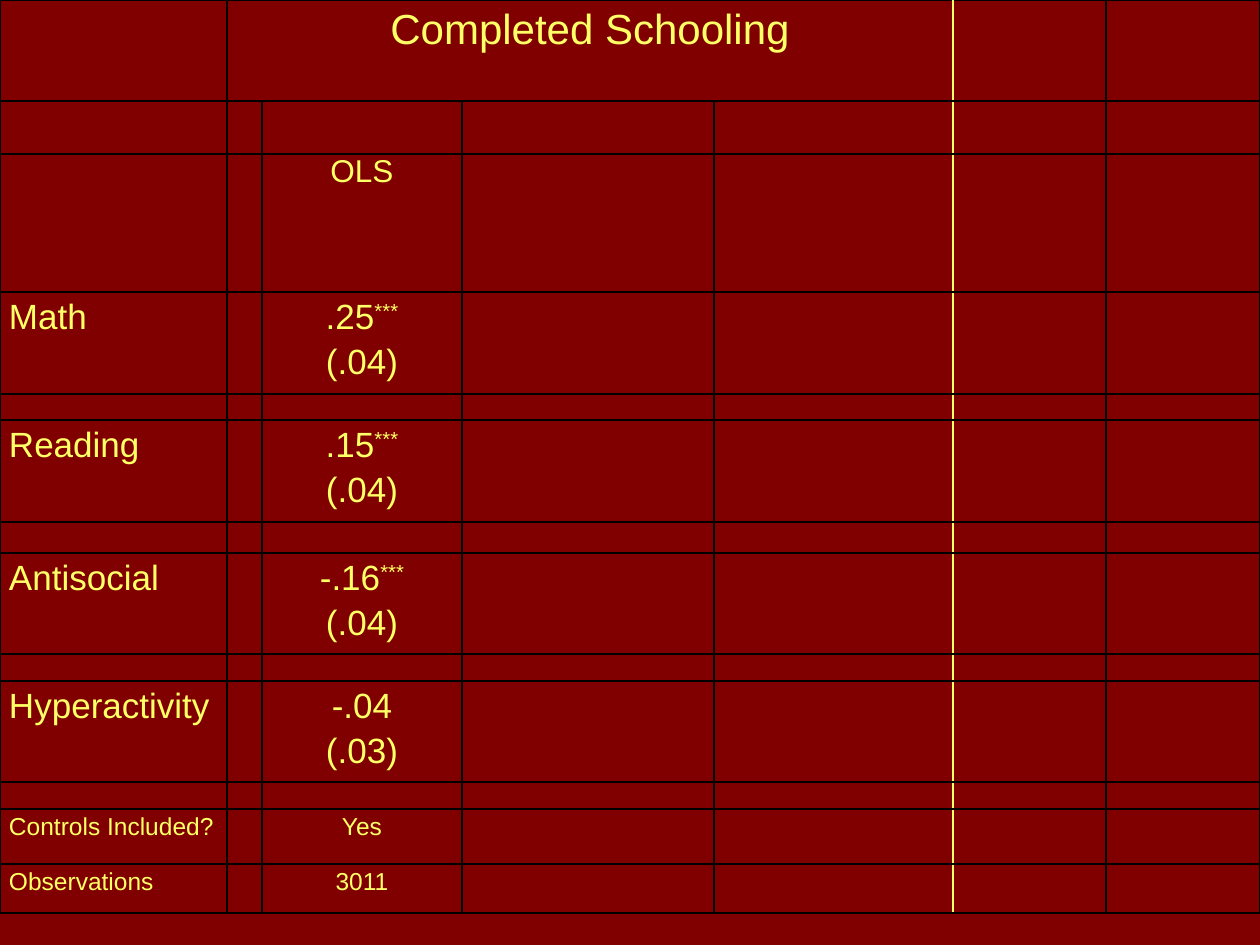
from lxml import etree
from pptx import Presentation
from pptx.dml.color import RGBColor
from pptx.enum.text import PP_ALIGN
from pptx.oxml.ns import qn
from pptx.util import Pt

CENTER, LEFT = PP_ALIGN.CENTER, PP_ALIGN.LEFT
EMU_PER_PX = 914400 / 126
COLORS = {"background": "800000", "text": "FFFF66", "line": "000000", "divider": "FFFF66"}
FONT = "Arial"
COLUMN_WIDTHS = [227, 35, 200, 252, 239, 153, 154]
ROW_HEIGHTS = [101, 53, 138, 102, 26, 102, 31, 101, 27, 101, 27, 55, 49]
DIVIDER_COLUMN = 4
COEFFICIENTS = [
    ("Math", ".25", "***", "(.04)"),
    ("Reading", ".15", "***", "(.04)"),
    ("Antisocial", "-.16", "***", "(.04)"),
    ("Hyperactivity", "-.04", "", "(.03)"),
]
SUMMARY = [("Controls Included?", "Yes"), ("Observations", "3011")]


def px(value):
    return round(value * EMU_PER_PX)


def set_border(cell, side, color):
    line = etree.SubElement(cell._tc.get_or_add_tcPr(), qn(f"a:ln{side}"), w=str(Pt(1)))
    fill = etree.SubElement(line, qn("a:solidFill"))
    etree.SubElement(fill, qn("a:srgbClr"), val=color)


def format_cell(cell, left_color, right_color):
    cell.margin_left = cell.margin_right = px(9)
    cell.margin_top = cell.margin_bottom = 0
    for side, color in zip("LRTB", (left_color, right_color, COLORS["line"], COLORS["line"])):
        set_border(cell, side, color)
    cell.fill.background()
    paragraph = cell.text_frame.paragraphs[0]
    etree.SubElement(paragraph._p, qn("a:endParaRPr"), sz="800")


def write_cell(cell, lines, size, alignment=CENTER, spacing=1.15):
    paragraph = cell.text_frame.paragraphs[0]
    paragraph.alignment = alignment
    paragraph.line_spacing = spacing
    paragraph.space_after = Pt(6)
    for index, (text, superscript) in enumerate(lines):
        if index:
            paragraph.add_line_break()
        for part, baseline in ((text, "0"), (superscript, "30000")):
            if part:
                run = paragraph.add_run()
                run.text = part
                run.font.name = FONT
                run.font.size = Pt(size)
                run.font.color.rgb = RGBColor.from_string(COLORS["text"])
                run._r.get_or_add_rPr().set("baseline", baseline)


def add_grid(slide, left, top):
    frame = slide.shapes.add_table(
        len(ROW_HEIGHTS), len(COLUMN_WIDTHS), px(left), px(top),
        px(sum(COLUMN_WIDTHS)), px(sum(ROW_HEIGHTS)))
    table = frame.table
    table.first_row = table.horz_banding = False
    for column, width in zip(table.columns, COLUMN_WIDTHS):
        column.width = px(width)
    for row, height in zip(table.rows, ROW_HEIGHTS):
        row.height = px(height)
    for row_index, row in enumerate(table.rows):
        for column_index, cell in enumerate(row.cells):
            is_title = row_index == 0 and column_index == 1
            at_divider = column_index == DIVIDER_COLUMN or is_title
            after_divider = column_index == DIVIDER_COLUMN + 1
            format_cell(cell,
                        COLORS["divider" if after_divider else "line"],
                        COLORS["divider" if at_divider else "line"])
    table.cell(0, 1).merge(table.cell(0, DIVIDER_COLUMN))
    return table


def add_regression_table(slide, left, top):
    table = add_grid(slide, left, top)
    write_cell(table.cell(0, 1), [("Completed Schooling", "")], 24)
    write_cell(table.cell(2, 2), [("OLS", "")], 18, spacing=1.0)
    for index, (label, estimate, stars, error) in enumerate(COEFFICIENTS):
        row = 3 + 2 * index
        write_cell(table.cell(row, 0), [(label, "")], 20, LEFT)
        write_cell(table.cell(row, 2), [(estimate, stars), (error, "")], 20)
    for row, (label, value) in enumerate(SUMMARY, 11):
        write_cell(table.cell(row, 0), [(label, "")], 14, LEFT)
        write_cell(table.cell(row, 2), [(value, "")], 14)


def main():
    presentation = Presentation()
    presentation.slide_width, presentation.slide_height = px(1260), px(945)
    slide = presentation.slides.add_slide(presentation.slide_layouts[6])
    slide.background.fill.solid()
    slide.background.fill.fore_color.rgb = RGBColor.from_string(COLORS["background"])
    add_regression_table(slide, 0, 0)
    presentation.save("out.pptx")


if __name__ == "__main__":
    main()
